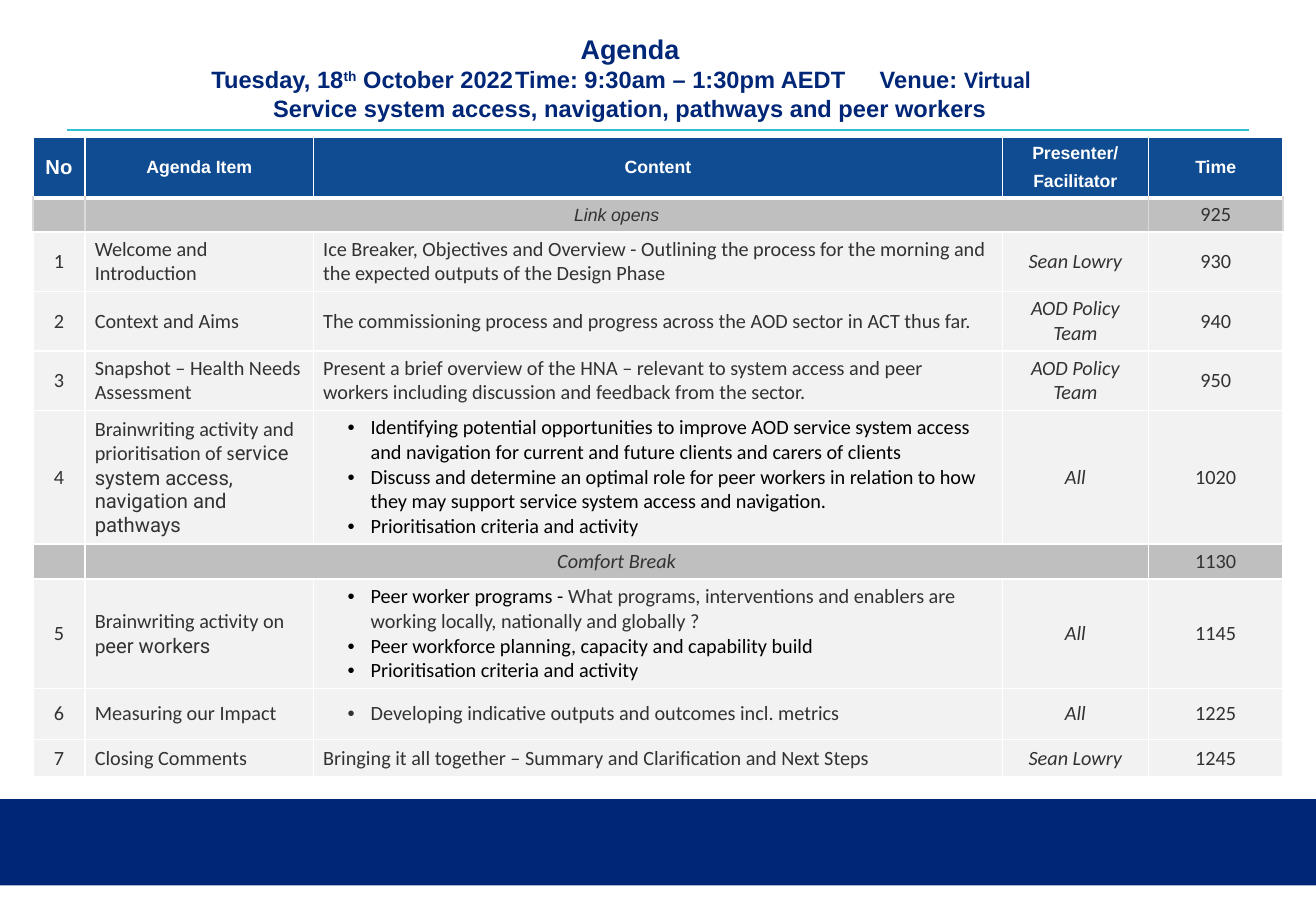
from dataclasses import dataclass

from pptx import Presentation
from pptx.dml.color import RGBColor
from pptx.enum.shapes import MSO_CONNECTOR, MSO_SHAPE
from pptx.enum.text import MSO_ANCHOR, PP_ALIGN
from pptx.oxml.xmlchemy import OxmlElement
from pptx.util import Inches, Pt

LEFT, CENTER = PP_ALIGN.LEFT, PP_ALIGN.CENTER
MIDDLE, TOP = MSO_ANCHOR.MIDDLE, MSO_ANCHOR.TOP
RECTANGLE, STRAIGHT = MSO_SHAPE.RECTANGLE, MSO_CONNECTOR.STRAIGHT


@dataclass(frozen=True)
class Theme:
    navy: str = "002677"
    teal: str = "31BFD1"
    header: str = "104C92"
    pause: str = "BFBFBF"
    item: str = "F2F2F2"
    divider: str = "D9D9D9"
    white: str = "FFFFFF"
    black: str = "000000"
    text: str = "323232"
    heading_font: str = "Arial"
    body_font: str = "Calibri"
    alternate_font: str = "Roboto"
    title_size: float = 16
    subtitle_size: float = 14
    body_size: float = 12
    header_size: float = 10.5


THEME = Theme()
COLUMNS = [0.43, 1.88, 5.67, 1.2, 1.11]
ROWS = [0.47, 0.28, 0.49, 0.49, 0.49, 1.1, 0.29, 0.9, 0.42, 0.31]
HEADERS = [["No"], ["Agenda Item"], ["Content"], ["Presenter/", "Facilitator"], ["Time"]]


@dataclass(frozen=True)
class Pause:
    label: str
    time: str
    font: str = THEME.body_font
    size: float = THEME.body_size
    divider: str = THEME.white


@dataclass(frozen=True)
class Item:
    """Agenda and content paragraphs are text, or lists of (text, format) spans."""
    agenda: object
    content: list
    presenter: str
    time: str
    bullet: bool = False
    content_color: str = THEME.text


ALTERNATE = {"font": THEME.alternate_font}
CRITERIA = "Prioritisation criteria and activity"
AGENDA = [
    Pause("Link opens", "925", THEME.heading_font, THEME.header_size, THEME.divider),
    Item("Welcome and Introduction",
         ["Ice Breaker, Objectives and Overview - Outlining the process for the morning and "
          "the expected outputs of the Design Phase"], "Sean Lowry", "930"),
    Item("Context and Aims",
         ["The commissioning process and progress across the AOD sector in ACT thus far."],
         "AOD Policy Team", "940"),
    Item("Snapshot – Health Needs Assessment",
         ["Present a brief overview of the HNA – relevant to system access and peer "
          "workers including discussion and feedback from the sector."],
         "AOD Policy Team", "950"),
    Item([("Brainwriting activity and prioritisation of s", {}),
          ("ervice system access, navigation and pathways", ALTERNATE)],
         ["Identifying potential opportunities to improve AOD service system access "
          "and navigation for current and future clients and carers of clients",
          "Discuss and determine an optimal role for peer workers in relation to how "
          "they may support service system access and navigation.",
          CRITERIA], "All", "1020", True, THEME.black),
    Pause("Comfort Break", "1130"),
    Item([("Brainwriting activity on p", {}), ("eer workers", ALTERNATE)],
         [[("Peer worker programs - ", {}),
           ("What programs, interventions and enablers are working locally, "
            "nationally and globally ?", {"color": THEME.text})],
          "Peer workforce planning, capacity and capability build",
          CRITERIA], "All", "1145", True, THEME.black),
    Item("Measuring our Impact",
         ["Developing indicative outputs and outcomes incl. metrics"], "All", "1225", True),
    Item("Closing Comments",
         ["Bringing it all together – Summary and Clarification and Next Steps"],
         "Sean Lowry", "1245"),
]


def add_element(parent, tag, **attributes):
    element = OxmlElement(tag)
    for name, value in attributes.items():
        element.set(name, str(value))
    parent.append(element)
    return element


def add_span(para, text, font=THEME.body_font, size=THEME.body_size, color=THEME.text,
             bold=False, italic=False, raised=False):
    span = para.add_run()
    span.text = text
    span.font.name, span.font.size = font, Pt(size)
    span.font.bold, span.font.italic = bold, italic
    span.font.color.rgb = RGBColor.from_string(color)
    if raised:
        span.font._element.set("baseline", "30000")


def write(frame, paragraphs, align=LEFT, anchor=MIDDLE, before=0, after=0, bullet=False,
          **style):
    """Fill a text frame or cell; span formats override the shared style."""
    frame.vertical_anchor = anchor
    text_frame = getattr(frame, "text_frame", frame)
    text_frame.word_wrap = True
    for index, content in enumerate(paragraphs):
        para = text_frame.add_paragraph() if index else text_frame.paragraphs[0]
        para.alignment = align
        para.space_before = Pt(before if index else 0)
        para.space_after = Pt(after)
        if bullet:
            properties = para._p.get_or_add_pPr()
            properties.set("marL", str(Inches(0.39)))
            properties.set("indent", str(Inches(-0.19)))
            add_element(properties, "a:buFont", typeface=THEME.heading_font)
            add_element(properties, "a:buChar", char="•")
        spans = [(content, {})] if isinstance(content, str) else content
        for text, override in spans:
            add_span(para, text, **{**style, **override})


def format_cell(cell, fill, side=THEME.white, bottom_width=1):
    cell.margin_left = cell.margin_right = Inches(0.08)
    cell.margin_top = cell.margin_bottom = Inches(0.04)
    properties = cell._tc.get_or_add_tcPr()
    borders = [("a:lnL", side, 1), ("a:lnR", side, 1),
               ("a:lnT", THEME.white, 1), ("a:lnB", THEME.white, bottom_width)]
    for tag, color, width in borders:
        line = add_element(properties, tag, w=Pt(width))
        add_element(add_element(line, "a:solidFill"), "a:srgbClr", val=color)
    cell.fill.solid()
    cell.fill.fore_color.rgb = RGBColor.from_string(fill)


def write_pause(cells, pause):
    for cell in cells:
        format_cell(cell, THEME.pause, pause.divider)
    cells[1].merge(cells[3])
    for cell in cells[:1] + cells[2:4]:
        add_element(cell.text_frame.paragraphs[0]._p, "a:endParaRPr",
                    sz=int(THEME.header_size * 100))
    write(cells[1], [pause.label], CENTER, after=3, italic=True,
          font=pause.font, size=pause.size)
    write(cells[4], [pause.time], CENTER, after=3)


def write_item(cells, number, item):
    for cell in cells:
        format_cell(cell, THEME.item)
    write(cells[0], [str(number)], CENTER, after=3)
    write(cells[1], [item.agenda], after=3)
    write(cells[2], item.content, after=0 if item.bullet else 3, bullet=item.bullet,
          color=item.content_color)
    write(cells[3], [item.presenter], CENTER, after=2, italic=True)
    write(cells[4], [item.time], CENTER, after=3)


def add_agenda(page):
    table = page.shapes.add_table(len(ROWS), len(COLUMNS), Inches(0.27), Inches(1.13),
                                  Inches(sum(COLUMNS)), Inches(sum(ROWS))).table
    table.horz_banding = False
    for column, width in zip(table.columns, COLUMNS):
        column.width = Inches(width)
    for row, height in zip(table.rows, ROWS):
        row.height = Inches(height)
    for index, (cell, label) in enumerate(zip(table.rows[0].cells, HEADERS)):
        format_cell(cell, THEME.header, bottom_width=3)
        write(cell, label, CENTER, before=2, after=3, font=THEME.heading_font, bold=True,
              size=THEME.header_size if index else THEME.body_size, color=THEME.white)
    number = 0
    for row, entry in zip(list(table.rows)[1:], AGENDA):
        cells = list(row.cells)
        if isinstance(entry, Pause):
            write_pause(cells, entry)
        else:
            number += 1
            write_item(cells, number, entry)


def add_title(page):
    box = page.shapes.add_textbox(Inches(0.46), Inches(0.21), Inches(9.45), Inches(0.7))
    frame = box.text_frame
    frame.margin_left = frame.margin_right = frame.margin_bottom = 0
    frame.margin_top = Inches(0.06)
    details = [("Tuesday, 18", {}), ("th", {"raised": True}),
               (" October 2022\tTime: 9:30am – 1:30pm AEDT\tVenue: ", {}),
               ("Virtual", {"font": THEME.body_font})]
    write(frame, [[("Agenda", {"size": THEME.title_size})], details,
                  "Service system access, navigation, pathways and peer workers"],
          CENTER, TOP, font=THEME.heading_font, size=THEME.subtitle_size,
          color=THEME.navy, bold=True)
    para = frame.paragraphs[1]
    para.alignment = LEFT
    properties = para._p.get_or_add_pPr()
    properties.set("marL", str(Inches(1.28)))
    properties.set("indent", "0")
    stops = add_element(properties, "a:tabLst")
    for position in (3.98, 6.91):
        add_element(stops, "a:tab", pos=Inches(position), algn="l")


def add_band(page):
    band = page.shapes.add_shape(RECTANGLE, 0, Inches(6.58), Inches(10.83), Inches(0.71))
    band.shadow.inherit = False
    band.fill.solid()
    band.fill.fore_color.rgb = RGBColor.from_string(THEME.navy)
    band.line.fill.background()


def add_rule(page):
    rule = page.shapes.add_connector(STRAIGHT, Inches(0.55), Inches(1.07),
                                     Inches(10.28), Inches(1.07))
    rule.line.color.rgb = RGBColor.from_string(THEME.teal)
    rule.line.width = Pt(1)
    add_element(rule._element.spPr, "a:effectLst")


def main():
    deck = Presentation()
    deck.slide_width, deck.slide_height = Inches(10.83), Inches(7.5)
    page = deck.slides.add_slide(deck.slide_layouts[6])
    add_band(page)
    add_rule(page)
    add_title(page)
    add_agenda(page)
    deck.save("out.pptx")


if __name__ == "__main__":
    main()
